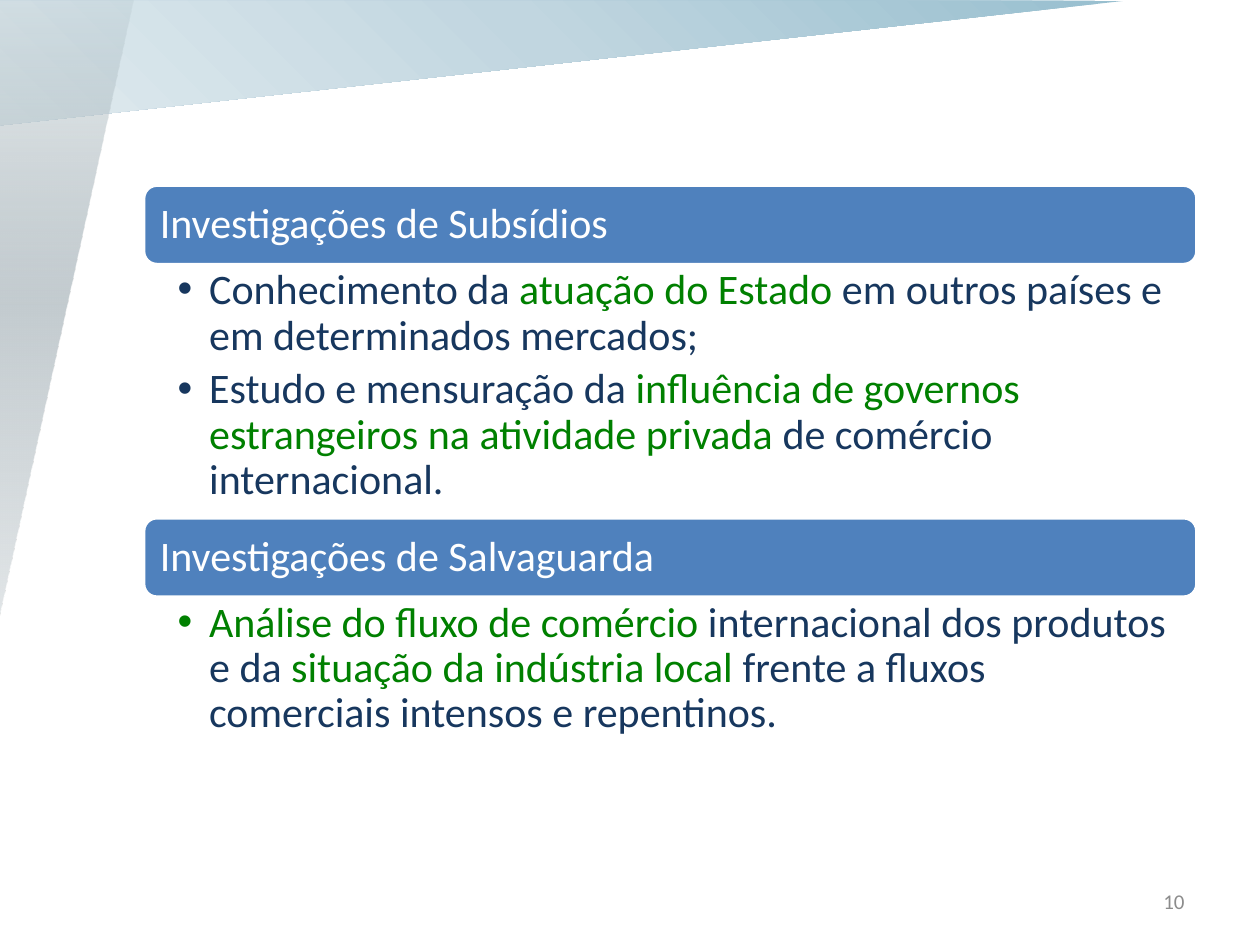
from lxml import etree
from pptx import Presentation
from pptx import util as u
from pptx.dml.color import RGBColor
from pptx.enum import shapes, text
from pptx.oxml import ns

COLORS = {"white": "FFFFFF", "blue": "4F81BD", "navy": "17375E",
          "green": "008000", "gray": "8C8C8C"}

SECTIONS = [
    ("Investigações de Subsídios", 2.01, [
        [("Conhecimento da ", "navy"), ("atuação do Estado", "green"),
         (" em outros países e em determinados mercados;", "navy")],
        [("Estudo e mensuração da ", "navy"),
         ("influência de governos estrangeiros na atividade privada", "green"),
         (" de comércio internacional.", "navy")],
    ]),
    ("Investigações de Salvaguarda", 1.17, [
        [("Análise do fluxo de comércio ", "green"),
         ("internacional dos produtos e da ", "navy"),
         ("situação da indústria local ", "green"),
         ("frente a fluxos comerciais intensos e repentinos.", "navy")],
    ]),
]
PAGE_NUMBER = "10"

TRIANGLES = [
    {"box": (3.97, -3.97, 0.99, 8.94), "rotation": 90, "flip": False, "angle": 45,
     "stops": [(0, "98BFCF", 100), (50, "C1D6E0", 100), (100, "E1EBEF", 100)]},
    {"box": (-0.01, 0, 1.07, 4.93), "rotation": 180, "flip": True, "angle": 270,
     "stops": [(0, "9CADB4", 15), (50, "C4CCD0", 100), (100, "E2E6E8", 100)]},
]

LEFT, TOP, WIDTH, BAR_HEIGHT, INSET = 1.14, 1.47, 8.36, 0.63, 0.03
HEADING = {"size": 24, "anchor": text.MSO_ANCHOR.MIDDLE, "margins": (0.1, 0.1, 0.1, 0.1),
           "paragraph": {"line_spacing": 0.9}}
BODY = {"size": 24, "anchor": text.MSO_ANCHOR.TOP, "margins": (0.27, 0.03, 0.19, 0.03),
        "paragraph": {"line_spacing": 0.9, "space_after": u.Pt(4.8)}, "bullet": True}
NUMBER = {"size": 12, "anchor": text.MSO_ANCHOR.MIDDLE, "margins": (0.1, 0.05, 0.1, 0.05),
          "paragraph": {"alignment": text.PP_ALIGN.RIGHT}}


def inches(box):
    return [u.Inches(value) for value in box]


def set_attributes(target, values):
    for name, value in values.items():
        setattr(target, name, value)


def add_element(parent, tag, **attributes):
    return etree.SubElement(parent, ns.qn(tag), attributes)


def add_triangle(slide, triangle):
    shape = slide.shapes.add_shape(shapes.MSO_SHAPE.RIGHT_TRIANGLE, *inches(triangle["box"]))
    shape.shadow.inherit = False
    shape.rotation = triangle["rotation"]
    shape.line.fill.background()
    properties = shape.element.spPr
    if triangle["flip"]:
        properties.find(ns.qn("a:xfrm")).set("flipH", "1")
    gradient = etree.Element(ns.qn("a:gradFill"), rotWithShape="1")
    stops = add_element(gradient, "a:gsLst")
    for position, color, opacity in triangle["stops"]:
        stop = add_element(stops, "a:gs", pos=str(position * 1000))
        fill = add_element(stop, "a:srgbClr", val=color)
        if opacity < 100:
            add_element(fill, "a:alpha", val=str(opacity * 1000))
    add_element(gradient, "a:lin", ang=str(triangle["angle"] * 60000), scaled="0")
    properties.find(ns.qn("a:prstGeom")).addnext(gradient)


def add_bar(slide, box):
    shape = slide.shapes.add_shape(shapes.MSO_SHAPE.ROUNDED_RECTANGLE, *inches(box))
    shape.shadow.inherit = False
    shape.fill.solid()
    shape.fill.fore_color.rgb = RGBColor.from_string(COLORS["blue"])
    shape.line.color.rgb = RGBColor.from_string(COLORS["white"])
    shape.line.width = u.Pt(2)


def add_text(slide, box, paragraphs, style):
    frame = slide.shapes.add_textbox(*inches(box)).text_frame
    sides = ("margin_left", "margin_top", "margin_right", "margin_bottom")
    set_attributes(frame, {"word_wrap": True, "vertical_anchor": style["anchor"],
                           **dict(zip(sides, inches(style["margins"])))})
    for index, runs in enumerate(paragraphs):
        paragraph = frame.add_paragraph() if index else frame.paragraphs[0]
        if style.get("bullet"):
            properties = paragraph._p.get_or_add_pPr()
            properties.set("marL", str(u.Inches(0.25)))
            properties.set("indent", str(u.Inches(-0.25)))
            add_element(properties, "a:buFont", typeface="Arial")
            add_element(properties, "a:buChar", char="•")
        set_attributes(paragraph, style["paragraph"])
        for content, color in runs:
            run = paragraph.add_run()
            run.text = content
            set_attributes(run.font, {"name": "Calibri", "size": u.Pt(style["size"])})
            run.font.color.rgb = RGBColor.from_string(COLORS[color])


def main():
    presentation = Presentation()
    set_attributes(presentation, {"slide_width": u.Inches(10), "slide_height": u.Inches(7.5)})
    slide = presentation.slides.add_slide(presentation.slide_layouts[6])
    for triangle in TRIANGLES:
        add_triangle(slide, triangle)
    top = TOP
    for heading, body_height, bullets in SECTIONS:
        add_bar(slide, (LEFT, top, WIDTH, BAR_HEIGHT))
        heading_box = (LEFT + INSET, top + INSET, WIDTH - 2 * INSET, BAR_HEIGHT - 2 * INSET)
        add_text(slide, heading_box, [[(heading, "white")]], HEADING)
        top += BAR_HEIGHT
        add_text(slide, (LEFT, top, WIDTH, body_height), bullets, BODY)
        top += body_height
    add_text(slide, (7.17, 6.95, 2.33, 0.4), [[(PAGE_NUMBER, "gray")]], NUMBER)
    presentation.save("out.pptx")


if __name__ == "__main__":
    main()
